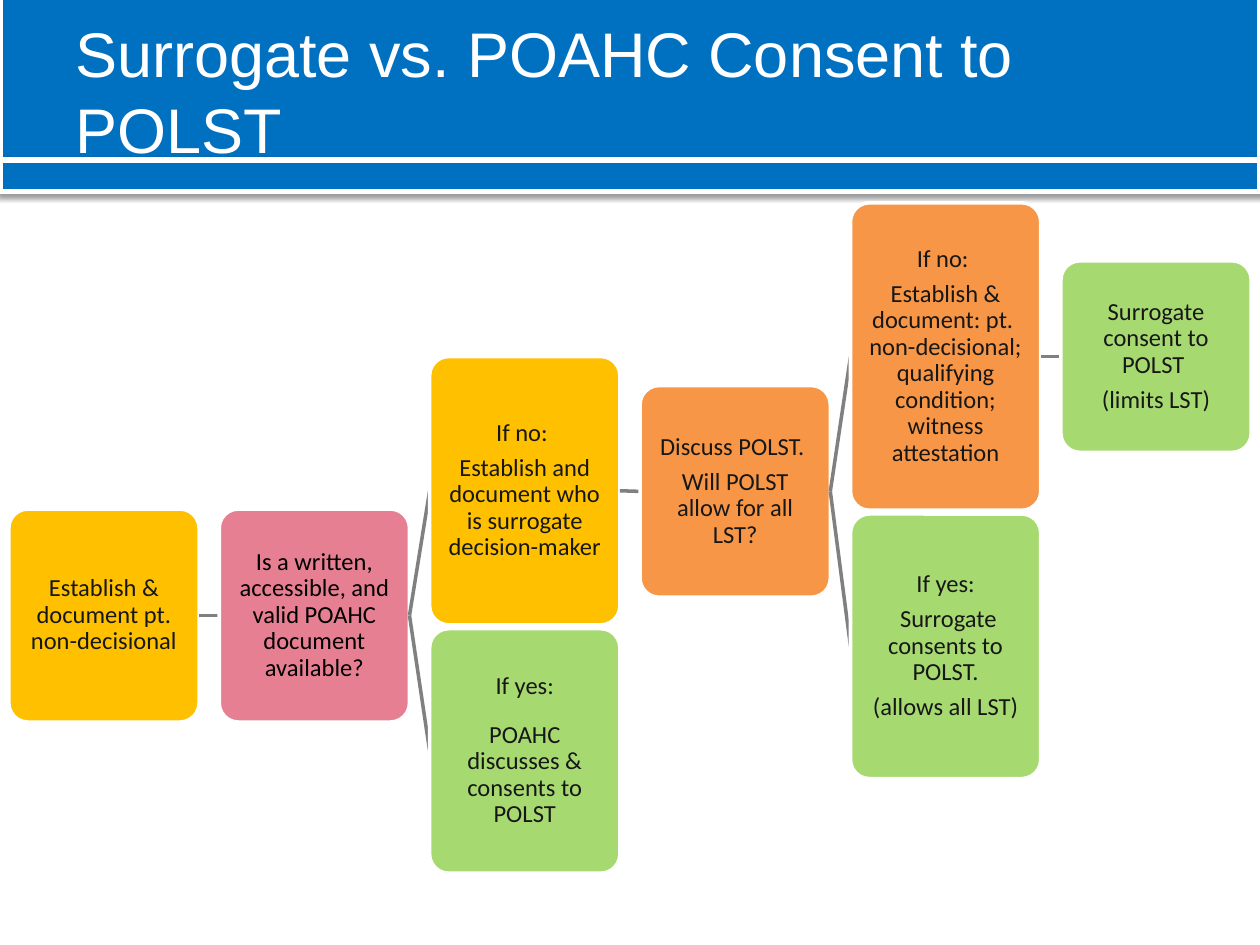
from lxml import etree
from pptx import Presentation
from pptx import util as u
from pptx.dml.color import RGBColor
from pptx.enum import shapes, text
from pptx.oxml.ns import qn

BLUE, WHITE, GREY = "0070C0", "FFFFFF", "808080"
YELLOW, PINK, ORANGE, GREEN = "FFC000", "E77F93", "F79646", "A7D971"
BLACK, INK = "000000", "171717"
BOX_WIDTH, COLUMN_STEP, FIRST_LEFT = 1.51, 1.67, 0.07

STEPS = {
    "start": (None, 0, 4.04, 1.69, YELLOW, ["Establish & document pt. non-decisional"]),
    "document": ("start", 1, 4.04, 1.69, PINK,
                 ["Is a written, accessible, and valid POAHC document available?"]),
    "no document": ("document", 2, 2.83, 2.13, YELLOW,
                    ["If no: ", "Establish and document who is surrogate decision-maker"]),
    "discuss": ("no document", 3, 3.06, 1.68, ORANGE,
                ["Discuss POLST. ", "Will POLST allow for all LST?"]),
    "limited": ("discuss", 4, 1.61, 2.44, ORANGE,
                ["If no: ", "Establish & document: pt.  non-decisional; "
                 "qualifying condition; witness attestation"]),
    "surrogate limits": ("limited", 5, 2.07, 1.52, GREEN,
                         ["Surrogate consent to POLST ", "(limits LST)"]),
    "surrogate allows": ("discuss", 4, 4.08, 2.1, GREEN,
                         ["If yes:", " Surrogate consents to POLST.", "(allows all LST)"]),
    "agent consents": ("document", 2, 4.99, 1.94, GREEN,
                       ["If yes:", "POAHC discusses & consents to POLST"]),
}


def colour(value):
    return RGBColor.from_string(value)


def apply(target, values):
    for name, value in values.items():
        setattr(target, name, value)


class FlowSlide:
    def __init__(self, slide):
        self.slide = slide
        self.step_frame = {
            "word_wrap": True, "vertical_anchor": text.MSO_ANCHOR.MIDDLE,
            **{f"margin_{side}": u.Inches(0.06) for side in ("left", "right", "top", "bottom")},
        }
        self.title_frame = {"word_wrap": True, "vertical_anchor": text.MSO_ANCHOR.MIDDLE}
        self.step_para = {"alignment": text.PP_ALIGN.CENTER, "line_spacing": 0.9}
        self.step_font = {"name": "Calibri", "size": u.Pt(14)}
        self.title_font = {"name": "Arial", "size": u.Pt(36)}

    def shape(self, kind, left, top, width, height, fill, line_width):
        shape = self.slide.shapes.add_shape(kind, *map(u.Inches, (left, top, width, height)))
        shape.shadow.inherit = False
        shape.fill.solid()
        shape.fill.fore_color.rgb = colour(fill)
        shape.line.color.rgb = colour(WHITE)
        shape.line.width = u.Pt(line_width)
        return shape

    def band(self, top, height):
        band = self.shape(shapes.MSO_SHAPE.RECTANGLE, 0, top, 10, height, BLUE, 3)
        effects = band._element.spPr.find(qn("a:effectLst"))
        shadow = etree.SubElement(effects, qn("a:outerShdw"), blurRad=str(u.Pt(3.1)),
                                  dist=str(u.Pt(1.6)), dir="5400000", rotWithShape="0")
        shade = etree.SubElement(shadow, qn("a:srgbClr"), val=BLACK)
        etree.SubElement(shade, qn("a:alpha"), val="38000")

    def add_words(self, para, words, font, ink):
        span = para.add_run()
        span.text = words
        apply(span.font, font)
        span.font.color.rgb = colour(ink)

    def title(self, words):
        box = self.slide.shapes.add_textbox(*map(u.Inches, (0.5, 0.09, 9, 1.25)))
        apply(box.text_frame, self.title_frame)
        self.add_words(box.text_frame.paragraphs[0], words, self.title_font, WHITE)

    def step(self, column, top, height, fill, lines, ink, gap):
        box = self.shape(shapes.MSO_SHAPE.ROUNDED_RECTANGLE, FIRST_LEFT + column * COLUMN_STEP,
                         top, BOX_WIDTH, height, fill, 2)
        box.adjustments[0] = 0.1
        frame = box.text_frame
        apply(frame, self.step_frame)
        for index, words in enumerate(lines):
            para = frame.add_paragraph() if index else frame.paragraphs[0]
            apply(para, {**self.step_para, "space_after": u.Pt(gap)})
            self.add_words(para, words, self.step_font, ink)

    def link(self, column, start_y, end_y):
        end_x = FIRST_LEFT + column * COLUMN_STEP
        start_x = end_x - COLUMN_STEP + BOX_WIDTH
        line = self.slide.shapes.add_connector(
            shapes.MSO_CONNECTOR.STRAIGHT, *map(u.Inches, (start_x, start_y, end_x, end_y)))
        line.line.color.rgb = colour(GREY)
        line.line.width = u.Pt(2)
        etree.SubElement(line._element.spPr, qn("a:effectLst"))


def main():
    deck = Presentation()
    apply(deck, {"slide_width": u.Inches(10), "slide_height": u.Inches(7.5)})
    page = FlowSlide(deck.slides.add_slide(deck.slide_layouts[6]))
    page.band(-0.05, 1.32)
    page.band(1.27, 0.25)
    page.title("Surrogate vs. POAHC Consent to POLST")
    middles = {name: top + height / 2 for name, (_, _, top, height, _, _) in STEPS.items()}
    for name, (parent, column, top, height, fill, lines) in STEPS.items():
        if parent:
            page.link(column, middles[parent], middles[name])
        ink = BLACK if fill == PINK else INK
        gap = 12.5 if name == "agent consents" else 4.9
        page.step(column, top, height, fill, lines, ink, gap)
    deck.save("out.pptx")


if __name__ == "__main__":
    main()
